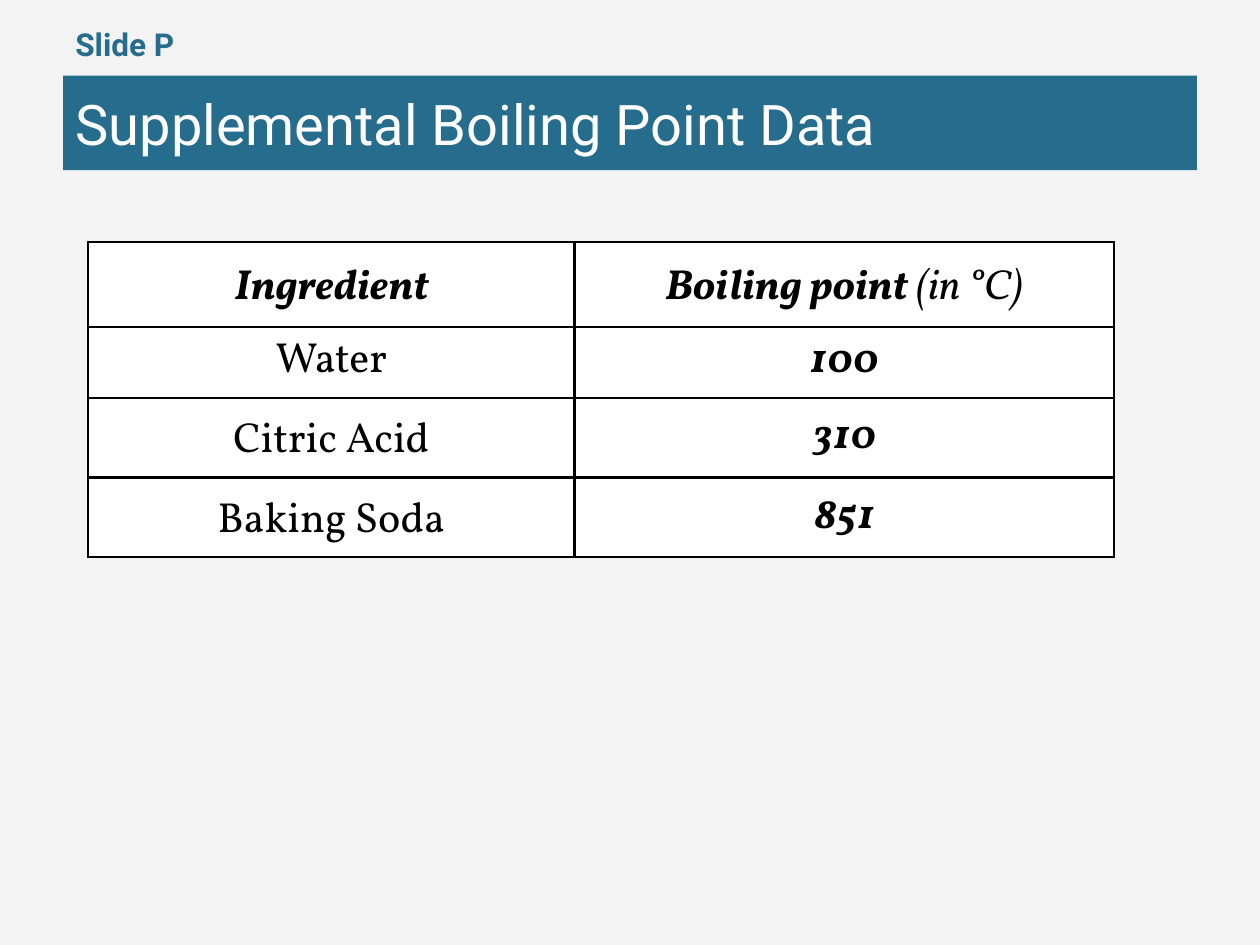
import pptx
import pptx.util
import pptx.dml.color
import pptx.enum.text
import pptx.oxml
import pptx.oxml.ns

Inches = pptx.util.Inches
Pt = pptx.util.Pt
Align = pptx.enum.text.PP_ALIGN
Anchor = pptx.enum.text.MSO_ANCHOR


def color(code):
    return pptx.dml.color.RGBColor.from_string(code)


def paint(fill, code):
    fill.solid()
    fill.fore_color.rgb = color(code)


class Deck:
    blue, white, black, gray = "256C8D", "FFFFFF", "000000", "F3F3F3"
    sans, serif = "Roboto", "Vollkorn"

    def __init__(self, wide, high):
        self.file = pptx.Presentation()
        self.file.slide_width = Inches(wide)
        self.file.slide_height = Inches(high)
        self.slide = self.file.slides.add_slide(self.file.slide_layouts[5])
        paint(self.slide.background.fill, self.gray)

    def font(self, para, name, size, code, bold=False, slant=False):
        font = para.font
        font.name, font.size = name, Pt(size)
        font.bold, font.italic = bold, slant
        font.color.rgb = color(code)

    def text(self, shape, box, words, size, code, anchor, bold=False):
        shape.left, shape.top, shape.width, shape.height = map(Inches, box)
        frame = shape.text_frame
        frame.word_wrap = True
        frame.auto_size = pptx.enum.text.MSO_AUTO_SIZE.NONE
        frame.vertical_anchor = anchor
        frame.margin_left = frame.margin_right = Inches(0.1)
        frame.margin_top = frame.margin_bottom = Inches(0.1)
        para = frame.paragraphs[0]
        para.text = words
        para.alignment = Align.LEFT
        self.font(para, self.sans, size, code, bold)

    def title(self, words, box):
        shape = self.slide.shapes.title
        paint(shape.fill, self.blue)
        self.text(shape, box, words, 32, self.white, Anchor.MIDDLE)

    def label(self, words, box):
        shape = self.slide.shapes.add_textbox(*map(Inches, box))
        self.text(shape, box, words, 18, self.blue, Anchor.BOTTOM, True)

    def edge(self, cell):
        props = cell._tc.get_or_add_tcPr()
        for i, side in enumerate(("lnL", "lnR", "lnT", "lnB")):
            props.insert(i, pptx.oxml.parse_xml(
                f'<a:{side} {pptx.oxml.ns.nsdecls("a")} w="{Pt(1.5)}"><a:solidFill>'
                f'<a:srgbClr val="{self.black}"/></a:solidFill></a:{side}>'))

    def cell(self, cell, runs, head, strong, space):
        pad = Inches(0.07 if head else 0.05)
        cell.margin_left = cell.margin_right = pad
        cell.margin_top = cell.margin_bottom = pad
        cell.vertical_anchor = Anchor.TOP if head else Anchor.MIDDLE
        paint(cell.fill, self.white)
        self.edge(cell)
        para = cell.text_frame.paragraphs[0]
        para.alignment = Align.CENTER
        para.line_spacing = space
        self.font(para, self.serif, 24, self.black, strong, strong)
        for i, words in enumerate(runs):
            run = para.add_run()
            run.text = words
            if i:
                run.font.bold = False

    def table(self, rows, left, top, wides, highs):
        shape = self.slide.shapes.add_table(
            len(rows), len(wides), Inches(left), Inches(top),
            Inches(sum(wides)), Inches(sum(highs)))
        grid = shape.table
        grid.first_row = grid.horz_banding = False
        for col, wide in zip(grid.columns, wides):
            col.width = Inches(wide)
        for r, (row, high) in enumerate(zip(rows, highs)):
            grid.rows[r].height = Inches(high)
            for c, runs in enumerate(row):
                head = r == 0
                loose = head or (c == 0 and r > 1)
                self.cell(grid.cell(r, c), runs, head, head or c == 1,
                          1.15 if loose else 1.0)


def main():
    deck = Deck(10, 7.5)
    rows = [
        (["Ingredient"], ["Boiling point ", "(in °C)"]),
        (["Water"], ["100"]),
        (["Citric Acid"], ["310"]),
        (["Baking Soda"], ["851"]),
    ]
    deck.table(rows, 0.7, 1.92, (3.86, 4.28), (0.66, 0.56, 0.63, 0.63))
    deck.title("Supplemental Boiling Point Data", (0.5, 0.6, 9, 0.75))
    deck.label("Slide P", (0.5, 0, 4.07, 0.6))
    deck.file.save("out.pptx")


if __name__ == "__main__":
    main()
